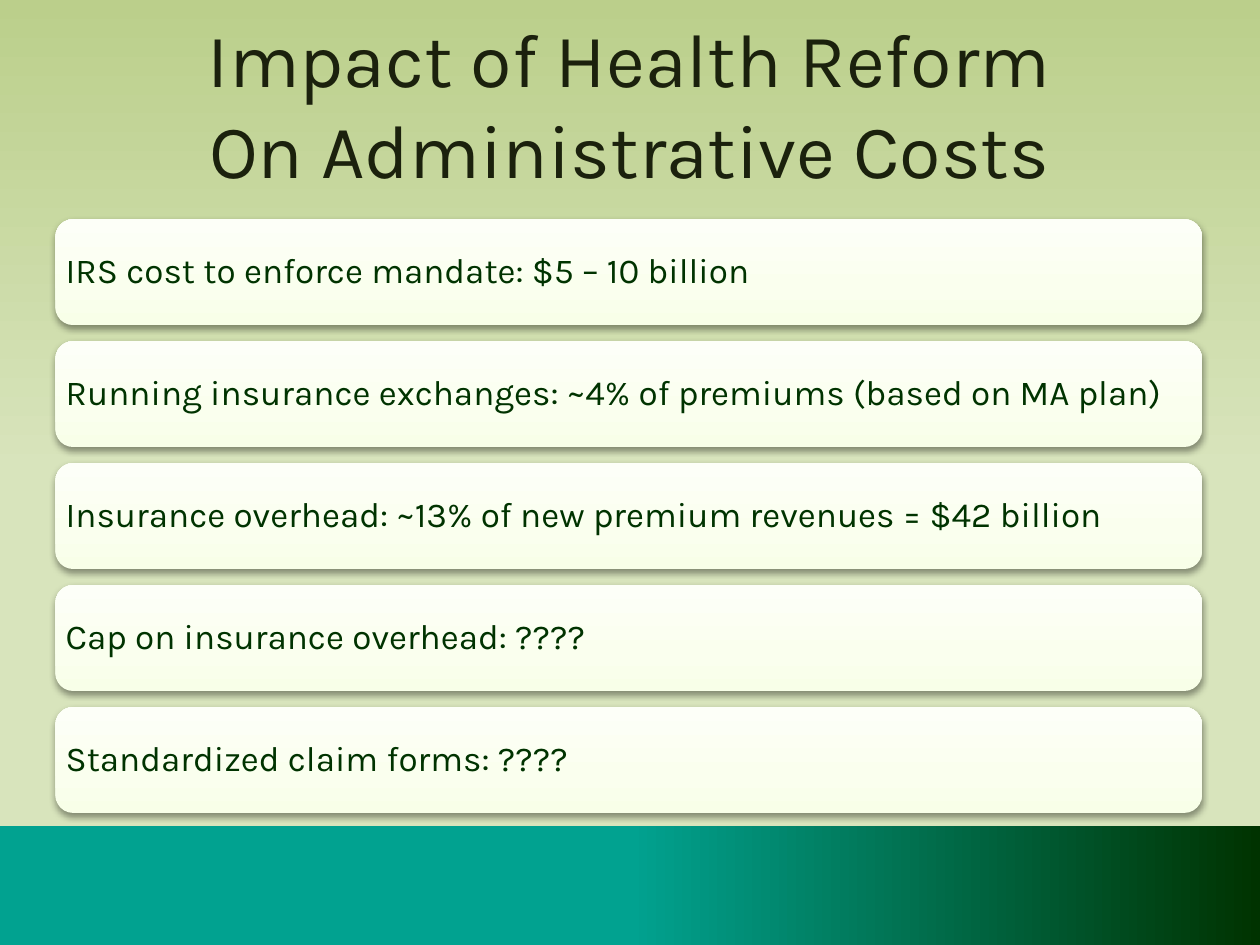
from lxml import etree
from pptx import Presentation
from pptx.dml.color import RGBColor
from pptx.enum import shapes, text
from pptx.oxml.ns import qn
from pptx.util import Inches, Pt

TITLE = "Impact of Health Reform\vOn Administrative Costs"
POINTS = [
    "IRS cost to enforce mandate: $5 – 10 billion",
    "Running insurance exchanges: ~4% of premiums (based on MA plan)",
    "Insurance overhead: ~13% of new premium revenues = $42 billion",
    "Cap on insurance overhead: ????",
    "Standardized claim forms: ????",
]
HUES = {"title": "1B210D", "body": "003300", "shadow": "000000"}
FADES = {
    "back": [(0, "BBCF8B"), (50, "D8E4BC"), (100, "D8E4BC")],
    "band": [(27, "01A290"), (50, "01A290"), (100, "003300")],
    "card": [(0, "F8FFE8"), (35, "FAFFEE"), (100, "FDFFF8")],
}
LEFT, TOP, WIDE, HIGH, STEP = 0.44, 1.74, 9.1, 0.84, 0.968


def add(parent, tag, **attrs):
    node = etree.SubElement(parent, qn(tag))
    for key, val in attrs.items():
        node.set(key, str(val))
    return node


def fade(fill, root, name, angle):
    """Fill with a named gradient; angle is clockwise from left to right."""
    fill.gradient()
    fill.gradient_angle = -angle % 360
    stops = root.find(".//" + qn("a:gsLst"))
    for old in list(stops):
        stops.remove(old)
    for pos, hue in FADES[name]:
        stop = add(stops, "a:gs", pos=pos * 1000)
        add(stop, "a:srgbClr", val=hue)


def block(slide, kind, box, name, angle):
    shape = slide.shapes.add_shape(kind, *map(Inches, box))
    shape.shadow.inherit = False
    shape.line.fill.background()
    fade(shape.fill, shape._element.spPr, name, angle)
    return shape


def shade(shape):
    """Add a soft shadow just below the shape."""
    effects = shape._element.spPr.find(qn("a:effectLst"))
    outer = add(effects, "a:outerShdw", blurRad=Pt(3.5), dist=Pt(2),
                dir=90 * 60000, rotWithShape=0)
    hue = add(outer, "a:srgbClr", val=HUES["shadow"])
    add(hue, "a:alpha", val=38000)


def write(shape, words, size, hue, align, frame):
    body = shape.text_frame
    body.text = words
    frame = {"word_wrap": True, "auto_size": text.MSO_AUTO_SIZE.NONE,
             "vertical_anchor": text.MSO_ANCHOR.MIDDLE, **frame}
    for key, val in frame.items():
        setattr(body, key, val)
    para = body.paragraphs[0]
    para.alignment = align
    for run in para.runs:
        run.font.name, run.font.size = "Karla", Pt(size)
        run.font.color.rgb = RGBColor.from_string(HUES[hue])
    return para


def main():
    deck = Presentation()
    deck.slide_width, deck.slide_height = Inches(10), Inches(7.5)
    slide = deck.slides.add_slide(deck.slide_layouts[5])
    fade(slide.background.fill, slide._element, "back", 90)

    title = slide.shapes.title
    title.left, title.top, title.width, title.height = map(
        Inches, (0.39, 0.19, 9.21, 1.25))
    write(title, TITLE, 43.2, "title", text.PP_ALIGN.CENTER, {})

    kinds = shapes.MSO_SHAPE
    block(slide, kinds.RECTANGLE, (0, 6.56, 10, 0.94), "band", 0)
    # The rounded corners inset the words by a further 0.04 inch.
    sides = ("left", "top", "right", "bottom")
    insets = {f"margin_{side}": Inches(0.04) for side in sides}
    for row, words in enumerate(POINTS):
        box = (LEFT, TOP + row * STEP, WIDE, HIGH)
        card = block(slide, kinds.ROUNDED_RECTANGLE, box, "card", 270)
        shade(card)
        para = write(card, words, 20, "body", text.PP_ALIGN.LEFT, insets)
        para.line_spacing = 0.9

    deck.save("out.pptx")


if __name__ == "__main__":
    main()
